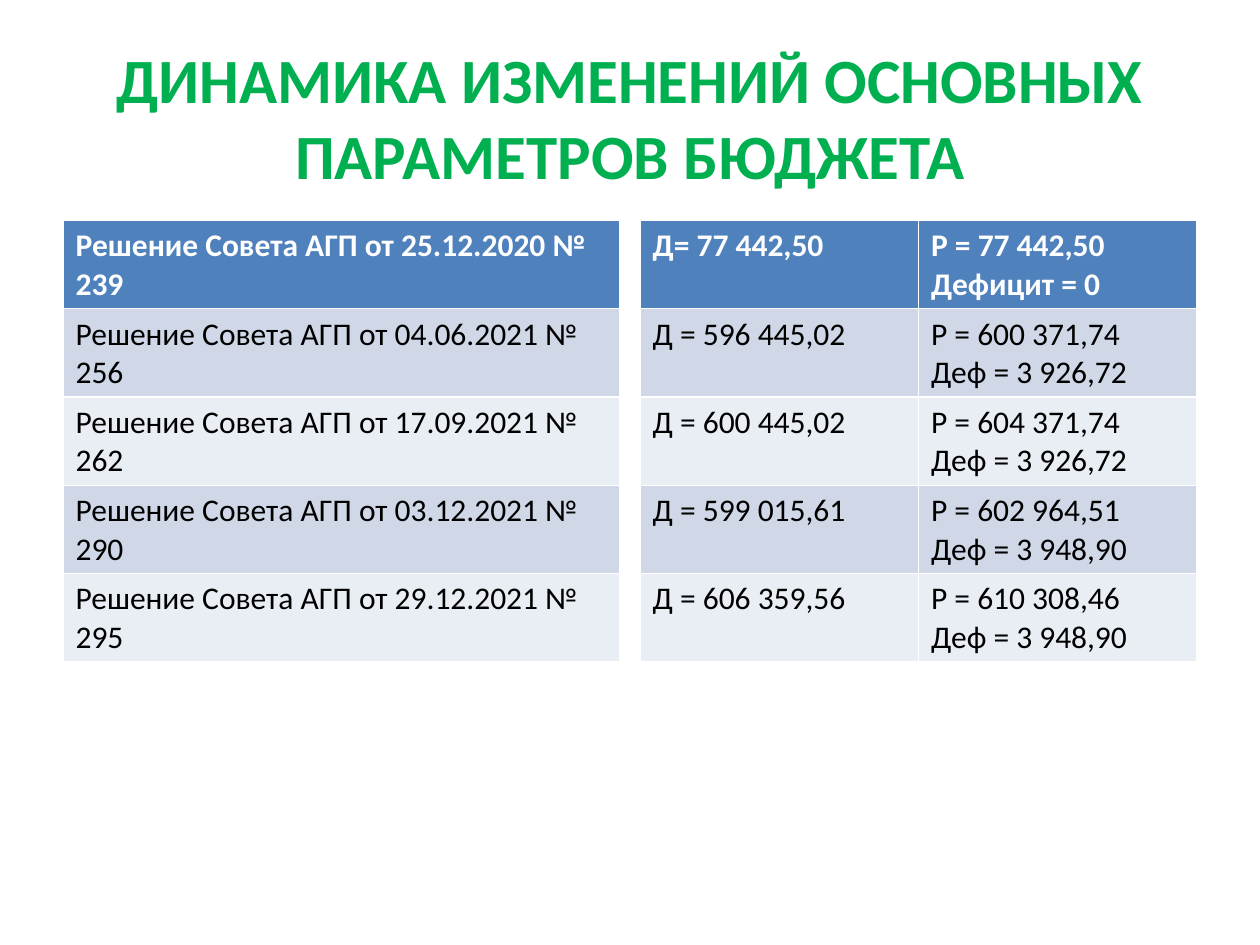
"""Build the slide on how the main budget figures changed."""
from pptx import Presentation
from pptx.dml.color import RGBColor
from pptx.enum.text import MSO_ANCHOR, PP_ALIGN
from pptx.util import Inches, Pt

MIDDLE = MSO_ANCHOR.MIDDLE
CENTER = PP_ALIGN.CENTER
FONT = "Calibri"
COLORS = {
    "title": "00B050",
    "header": "4F81BD",
    "header_text": "FFFFFF",
    "odd_row": "D0D8E8",
    "even_row": "E9EDF4",
    "body_text": "000000",
}

MARGIN = Inches(0.5)
TABLE_TOP = Inches(1.75)
TABLE_WIDTH = Inches(4.42)
ROW_HEIGHT = Inches(0.7)

decisions = [
    ["Решение Совета АГП от 25.12.2020 № 239"],
    ["Решение Совета АГП от 04.06.2021 № 256"],
    ["Решение Совета АГП от 17.09.2021 № 262"],
    ["Решение Совета АГП от 03.12.2021 № 290"],
    ["Решение Совета АГП от 29.12.2021 № 295"],
]
budget = [
    ["Д= 77 442,50", "Р = 77 442,50\nДефицит = 0"],
    ["Д = 596 445,02", "Р = 600 371,74\nДеф = 3 926,72"],
    ["Д = 600 445,02", "Р = 604 371,74\nДеф = 3 926,72"],
    ["Д = 599 015,61", "Р = 602 964,51\nДеф = 3 948,90"],
    ["Д = 606 359,56", "Р = 610 308,46\nДеф = 3 948,90"],
]


def style_paragraph(paragraph, size, color, bold):
    font = paragraph.font
    font.name = FONT
    font.size = Pt(size)
    font.bold = bold
    font.color.rgb = RGBColor.from_string(COLORS[color])


prs = Presentation()
prs.slide_width = Inches(10)
prs.slide_height = Inches(7.5)
slide = prs.slides.add_slide(prs.slide_layouts[6])

content_width = prs.slide_width - 2 * MARGIN
title = slide.shapes.add_textbox(MARGIN, Inches(0.3), content_width, Inches(1.25)).text_frame
title.word_wrap = True
title.vertical_anchor = MIDDLE
title.text = "ДИНАМИКА ИЗМЕНЕНИЙ ОСНОВНЫХ ПАРАМЕТРОВ БЮДЖЕТА"
title.paragraphs[0].alignment = CENTER
style_paragraph(title.paragraphs[0], 36, "title", True)

budget_left = prs.slide_width - MARGIN - TABLE_WIDTH
for left, rows in ((MARGIN, decisions), (budget_left, budget)):
    table = slide.shapes.add_table(
        len(rows), len(rows[0]), left, TABLE_TOP, TABLE_WIDTH, ROW_HEIGHT * len(rows)
    ).table
    for row, texts in enumerate(rows):
        is_header = row == 0
        fill = "header" if is_header else "odd_row" if row % 2 else "even_row"
        text_color = "header_text" if is_header else "body_text"
        for column, text in enumerate(texts):
            cell = table.cell(row, column)
            cell.text = text
            cell.fill.solid()
            cell.fill.fore_color.rgb = RGBColor.from_string(COLORS[fill])
            for paragraph in cell.text_frame.paragraphs:
                style_paragraph(paragraph, 18, text_color, is_header)

prs.save("out.pptx")
